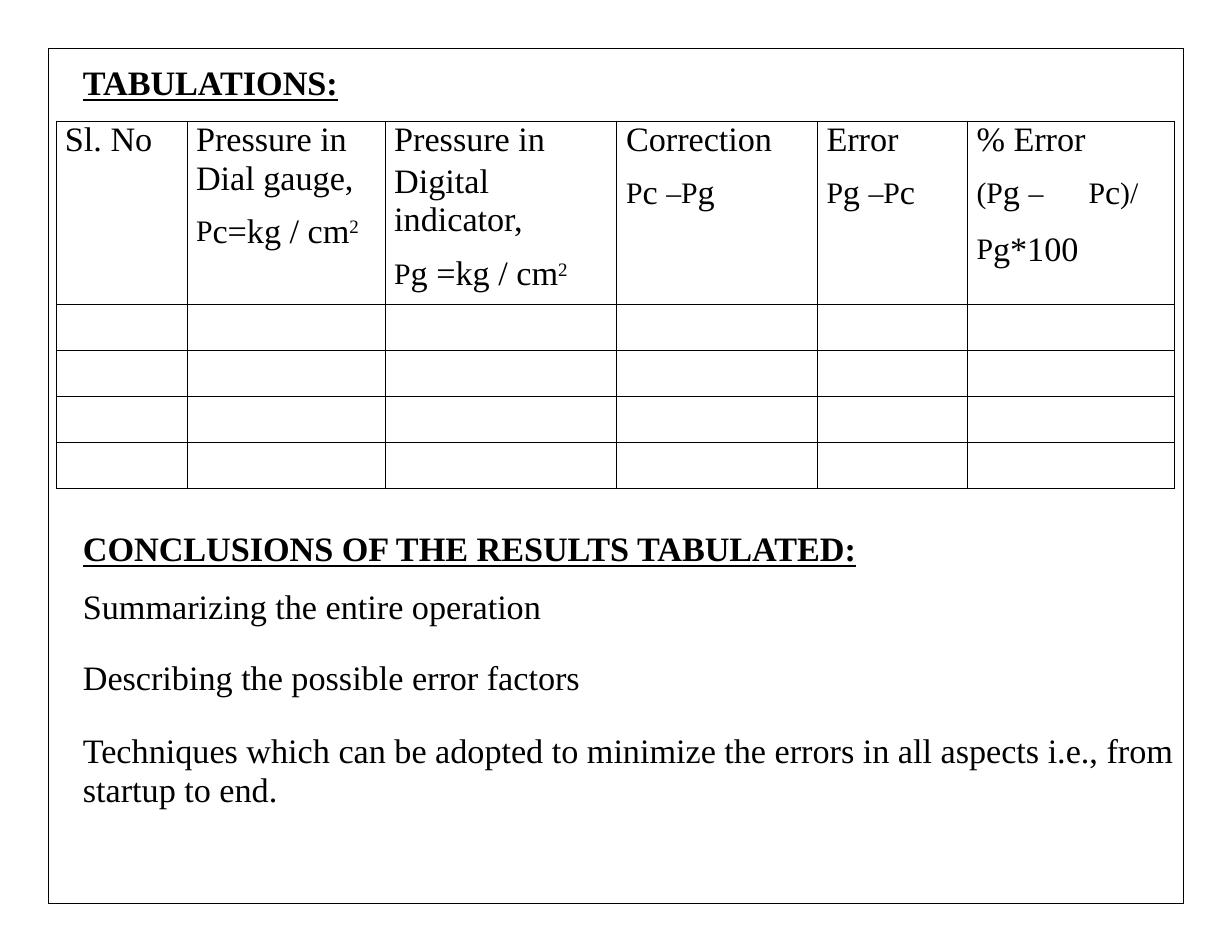
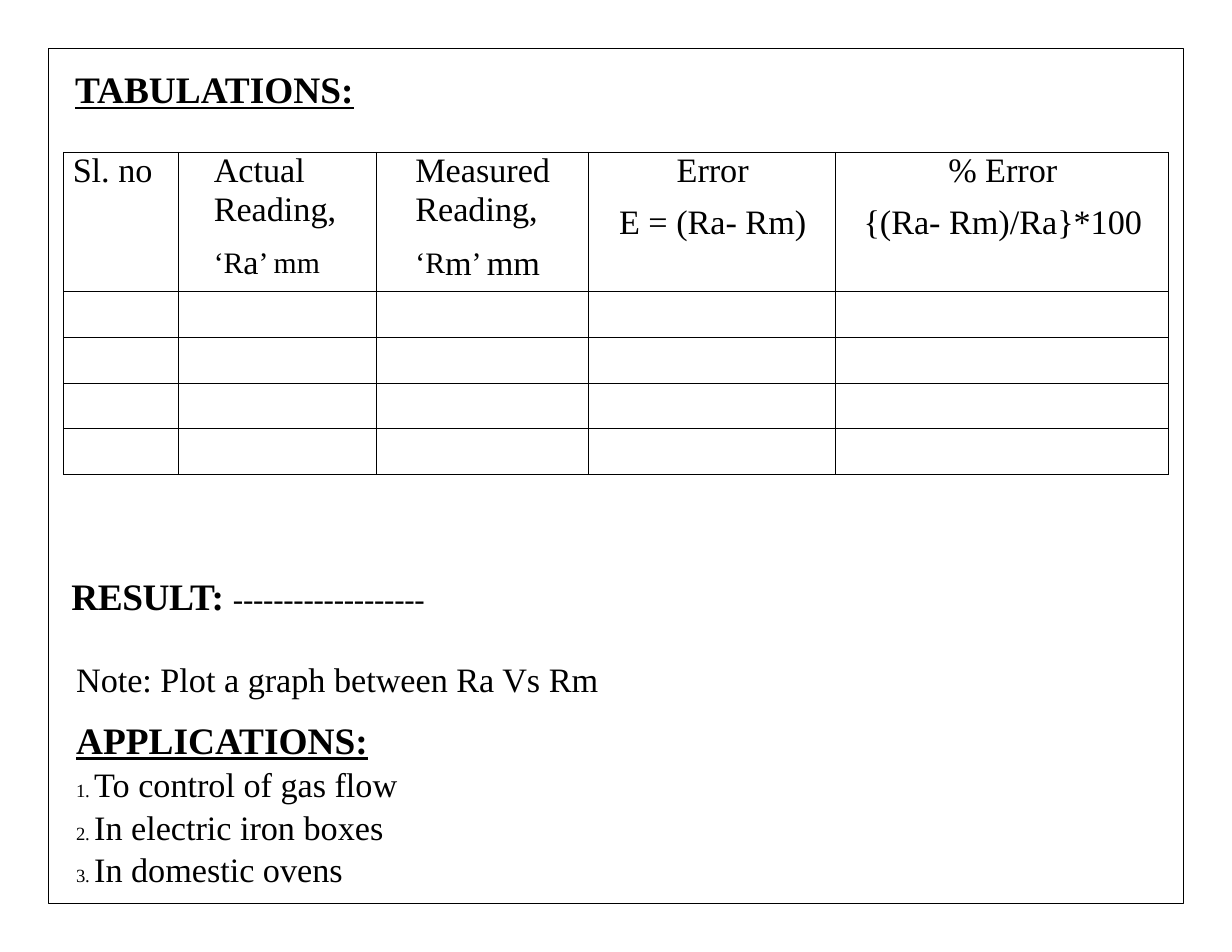
from lxml import etree
from pptx import Presentation
from pptx.dml.color import RGBColor
from pptx.enum.shapes import MSO_SHAPE
from pptx.enum.text import MSO_ANCHOR, MSO_AUTO_SIZE, PP_ALIGN
from pptx.oxml.ns import qn
from pptx.util import Inches, Pt

BLACK = RGBColor(0x00, 0x00, 0x00)
FONT = "Times New Roman"
RECTANGLE = MSO_SHAPE.RECTANGLE
TOP = MSO_ANCHOR.TOP
NO_AUTOFIT = MSO_AUTO_SIZE.NONE
LEFT = PP_ALIGN.LEFT
CENTER = PP_ALIGN.CENTER

WIDTH, HEIGHT = Inches(11), Inches(8.5)
COLUMN, ROW = WIDTH / 100, HEIGHT / 100
BODY_ROW = 4.82
EMPTY_ROWS = 4

PLAIN = {"size": 22}
RAISED = {"size": 33, "baseline": 3000}
SUPERSCRIPT = {"size": 21, "baseline": 29000}
HEADING = {"size": 22, "bold": True, "underline": True}
LARGE_HEADING = {"size": 24, "bold": True, "underline": True}
RESULT_LABEL = {"size": 24, "bold": True, "spc": -30}
RESULT_DASHES = {"size": 20, "spc": -20}
NUMBER = {"size": 12, "spc": -20}


def place(shape, left, top, width, height):
    shape.left, shape.width = int(left * COLUMN), int(width * COLUMN)
    shape.top, shape.height = int(top * ROW), int(height * ROW)


def write(frame, paragraphs, alignment=LEFT):
    for index, (space, *runs) in enumerate(paragraphs):
        paragraph = frame.paragraphs[0] if index == 0 else frame.add_paragraph()
        paragraph.alignment = alignment
        paragraph.space_before = Pt(space)
        properties = paragraph._p.get_or_add_pPr()
        properties.set("marL", "0")
        properties.set("indent", "0")
        etree.SubElement(properties, qn("a:buNone"))
        for text, style in runs:
            run = paragraph.add_run()
            run.text = text
            values = {"name": FONT, "bold": False, "underline": False, **style}
            values["size"] = Pt(style["size"])
            for name, value in values.items():
                if name in ("baseline", "spc"):
                    run.font._element.set(name, str(value)) if hasattr(run.font, "_element") else run._r.get_or_add_rPr().set(name, str(value))
                else:
                    setattr(run.font, name, value)
            run.font.color.rgb = BLACK


pressure_headers = [
    (0.08, LEFT, [(0, ("Sl. No", PLAIN))]),
    (0.08, LEFT, [
        (0, ("Pressure in", PLAIN)),
        (0.6, ("Dial gauge, ", PLAIN), ("P", RAISED), ("c=kg / cm", PLAIN), ("2", SUPERSCRIPT)),
    ]),
    (0.08, LEFT, [
        (0, ("Pressure in", PLAIN)),
        (2.6, ("Digital indicator,", PLAIN)),
        (0.9, ("P", RAISED), ("g =kg / cm", PLAIN), ("2", SUPERSCRIPT)),
    ]),
    (0.09, LEFT, [
        (0, ("Correction", PLAIN)),
        (0, ("P", RAISED), ("c ", PLAIN), ("–P", RAISED), ("g", PLAIN)),
    ]),
    (0.08, LEFT, [
        (0, ("Error", PLAIN)),
        (0, ("P", RAISED), ("g ", PLAIN), ("–P", RAISED), ("c", PLAIN)),
    ]),
    (0.08, LEFT, [
        (0, ("% Error", PLAIN)),
        (0, ("(P", RAISED), ("g ", PLAIN), ("–\tP", RAISED), ("c", PLAIN),
         (")/ P", RAISED), ("g*100", PLAIN)),
    ]),
]

reading_headers = [
    (0.08, LEFT, [(0, ("Sl. no", PLAIN))]),
    (0.32, LEFT, [
        (0, ("Actual", PLAIN)),
        (0.5, ("Reading, ", PLAIN), ("‘R", RAISED), ("a", PLAIN), ("’ mm", RAISED)),
    ]),
    (0.35, LEFT, [
        (0, ("Measured", PLAIN)),
        (0.8, ("Reading, ", PLAIN), ("‘R", RAISED), ("m", PLAIN), ("’ ", RAISED), ("mm", PLAIN)),
    ]),
    (0.02, CENTER, [(0, ("Error", PLAIN)), (9.2, ("E = (Ra- Rm)", PLAIN))]),
    (0.02, CENTER, [(0, ("% Error", PLAIN)), (9.2, ("{(Ra- Rm)/Ra}*100", PLAIN))]),
]

conclusions = [
    (11.9, ("CONCLUSIONS OF THE RESULTS TABULATED:", HEADING)),
    (11, ("Summarizing the entire operation", PLAIN)),
    (19.2, ("Describing the possible error factors", PLAIN)),
    (21.5, ("Techniques which can be adopted to minimize the errors in all aspects "
            "i.e., from startup to end.", PLAIN)),
]

applications = [
    (11.2, ("Note: Plot a graph between Ra Vs Rm", PLAIN)),
    (11.2, ("APPLICATIONS:", LARGE_HEADING)),
]
for number, use in enumerate(["control of gas flow", "electric iron boxes", "domestic ovens"], 1):
    preposition = "To " if number == 1 else "In "
    applications.append((1, (f"{number}. ", NUMBER), (preposition + use, PLAIN)))

pages = [
    {
        "title_box": (6.64, 6.24, 21.27, 4.59), "title_style": HEADING,
        "title_margins": (0.01, 0.02),
        "table_corner": (4.55, 12.71), "header_row": 19.29,
        "columns": [10.64, 16.09, 18.73, 16.36, 12.18, 16.82],
        "headers": pressure_headers,
        "body_box": (6.64, 53.41, 88.73, 31.65), "body_top": 0.17, "body": conclusions,
    },
    {
        "title_box": (5.18, 6.35, 24.73, 10.71), "title_style": LARGE_HEADING,
        "title_margins": (0.1, 0.05),
        "table_corner": (5.18, 16), "header_row": 14.59,
        "columns": [9.27, 16.09, 17.18, 20.09, 27],
        "headers": reading_headers,
        "body_box": (6.09, 67.29, 50.55, 26.35), "body_top": 0.16, "body": applications,
    },
]

presentation = Presentation()
presentation.slide_width, presentation.slide_height = WIDTH, HEIGHT

for page in pages:
    slide = presentation.slides.add_slide(presentation.slide_layouts[1])

    border = slide.shapes.add_shape(RECTANGLE, 0, 0, 0, 0)
    place(border, 3.95, 5.12, 92.1, 89.76)
    border.shadow.inherit = False
    border.fill.background()
    border.line.color.rgb = BLACK
    border.line.width = Pt(0.75)

    title, body = slide.placeholders
    title_left, title_top = page["title_margins"]
    for shape, box, left, top, paragraphs in [
        (title, page["title_box"], title_left, title_top,
         [(0, ("TABULATIONS:", page["title_style"]))]),
        (body, page["body_box"], 0.01, page["body_top"], page["body"]),
    ]:
        place(shape, *box)
        frame = shape.text_frame
        frame_format = {
            "margin_left": Inches(left), "margin_top": Inches(top),
            "margin_right": 0, "margin_bottom": 0,
            "vertical_anchor": TOP, "word_wrap": True, "auto_size": NO_AUTOFIT,
        }
        for name, value in frame_format.items():
            setattr(frame, name, value)
        write(frame, paragraphs)

    columns = page["columns"]
    rows = [page["header_row"]] + [BODY_ROW] * EMPTY_ROWS
    table_shape = slide.shapes.add_table(len(rows), len(columns), 0, 0, WIDTH, HEIGHT)
    place(table_shape, *page["table_corner"], sum(columns), sum(rows))
    table = table_shape.table
    table.first_row = table.horz_banding = False
    for column, share in zip(table.columns, columns):
        column.width = int(share * COLUMN)
    for row, share in zip(table.rows, rows):
        row.height = int(share * ROW)
    for cell in table.iter_cells():
        cell.margin_left = cell.margin_right = cell.margin_top = cell.margin_bottom = 0
        properties = cell._tc.get_or_add_tcPr()
        for side in ("lnL", "lnR", "lnT", "lnB"):
            line = etree.SubElement(properties, qn(f"a:{side}"), w=str(Pt(0.5)))
            fill = etree.SubElement(line, qn("a:solidFill"))
            etree.SubElement(fill, qn("a:srgbClr"), val=str(BLACK))
        cell.fill.background()
    for index, (margin, alignment, paragraphs) in enumerate(page["headers"]):
        cell = table.cell(0, index)
        cell.margin_left = Inches(margin)
        write(cell.text_frame, paragraphs, alignment)

    if page["body"] is conclusions:
        body.text_frame.paragraphs[-1].line_spacing = Pt(25.2)
    else:
        result = slide.shapes.add_textbox(0, 0, 0, 0)
        place(result, 3.91, 60.12, 32.45, 5.06)
        result.text_frame.word_wrap = True
        result.text_frame.margin_top = Inches(0.01)
        write(result.text_frame,
              [(1, ("RESULT: ", RESULT_LABEL), ("-" * 19, RESULT_DASHES))], CENTER)

presentation.save("out.pptx")
